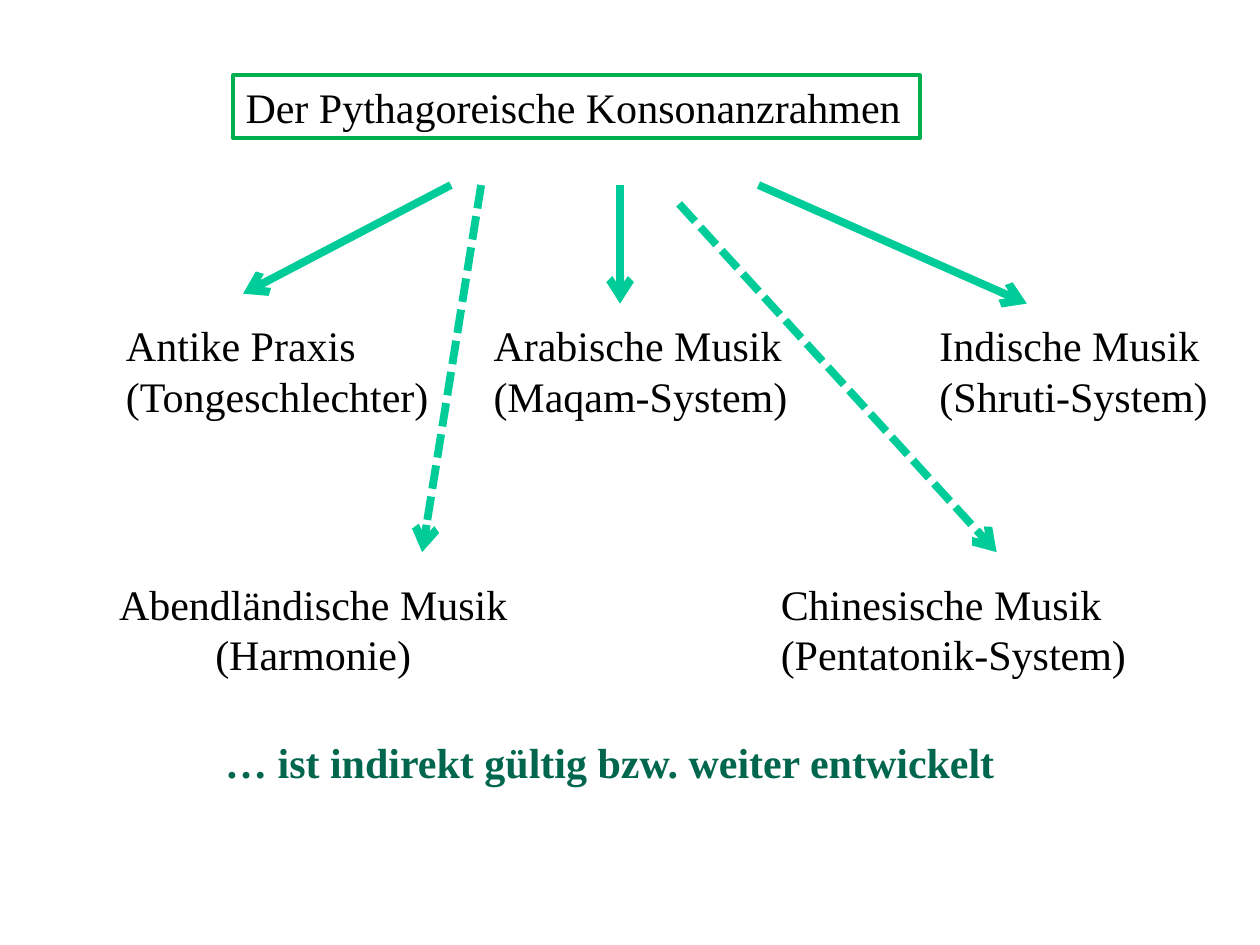
from lxml import etree
from pptx import Presentation
from pptx import util as u
from pptx.dml.color import RGBColor
from pptx.enum import dml, shapes, text
from pptx.oxml import ns

FONT = "Times New Roman"
BLACK, FRAME, ARROW, DARK = "000000", "00B050", "00CC99", "00664D"


def color(hex_value):
    """Return the colour for a hex string."""
    return RGBColor.from_string(hex_value)


def write(shape, lines, align=text.PP_ALIGN.LEFT, hue=BLACK, bold=False):
    """Fill a shape with unwrapped lines of text in the slide's type."""
    frame = shape.text_frame
    frame.text = "\n".join(lines)
    frame.word_wrap = False
    frame.auto_size = text.MSO_AUTO_SIZE.SHAPE_TO_FIT_TEXT
    frame.vertical_anchor = text.MSO_ANCHOR.TOP
    for paragraph in frame.paragraphs:
        paragraph.alignment = align
        for run in paragraph.runs:
            run.font.name = FONT
            run.font.size = u.Pt(24)
            run.font.bold = bold
            run.font.color.rgb = color(hue)


def add_heading(slide, left, top, width, height):
    """Place the framed heading in its box."""
    heading = slide.shapes.add_shape(
        shapes.MSO_SHAPE.RECTANGLE, *map(u.Cm, (left, top, width, height)))
    heading.shadow.inherit = False
    heading.fill.background()
    heading.line.color.rgb = color(FRAME)
    heading.line.width = u.Pt(2.25)
    write(heading, ["Der Pythagoreische Konsonanzrahmen"])


def add_label(slide, left, top, width, height, lines, **style):
    """Place a text label in its box."""
    label = slide.shapes.add_textbox(*map(u.Cm, (left, top, width, height)))
    write(label, lines, **style)


def add_traditions(slide, top, entries):
    """Place one row of musical traditions, each with its system below."""
    for left, width, tradition, system, align in entries:
        add_label(slide, left, top, width, 2.31, [tradition, system], align=align)


def add_arrow(slide, start, end, dashed):
    """Draw a green arrow, dashed for an indirect influence."""
    arrow = slide.shapes.add_connector(
        shapes.MSO_CONNECTOR.STRAIGHT, *map(u.Cm, (*start, *end)))
    arrow.line.color.rgb = color(ARROW)
    arrow.line.width = u.Pt(4.5)
    if dashed:
        arrow.line.dash_style = dml.MSO_LINE.SQUARE_DOT
    etree.SubElement(arrow.line._get_or_add_ln(), ns.qn("a:tailEnd"), type="arrow")
    etree.SubElement(arrow._element.spPr, ns.qn("a:effectLst"))


def add_influences(slide, left, top, width, height):
    """Fan the arrows out from the heading to the traditions."""
    near = 2.39
    influences = [
        ((4.19, 0), (0, 2.19), False),
        ((7.6, 0), (7.6, near), False),
        ((10.39, 0), (width, near), False),
        ((4.8, 0), (3.61, height), True),
        ((8.79, 0.38), (15.19, height), True),
    ]
    for (x1, y1), (x2, y2), dashed in influences:
        add_arrow(slide, (left + x1, top + y1), (left + x2, top + y2), dashed)


def main():
    """Build the slide and save it."""
    deck = Presentation()
    deck.slide_width, deck.slide_height = u.Cm(25.4), u.Cm(19.05)
    slide = deck.slides.add_slide(deck.slide_layouts[6])
    start, center = text.PP_ALIGN.LEFT, text.PP_ALIGN.CENTER
    add_traditions(slide, 6.32, [
        (2.29, 6.65, "Antike Praxis", "(Tongeschlechter)", start),
        (9.7, 6.5, "Arabische Musik", "(Maqam-System)", start),
        (18.69, 5.97, "Indische Musik", "(Shruti-System)", start),
    ])
    add_traditions(slide, 11.53, [
        (2.11, 8.41, "Abendländische Musik", "(Harmonie)", center),
        (15.49, 7.54, "Chinesische Musik", "(Pentatonik-System)", start),
    ])
    add_heading(slide, 4.7, 1.52, 13.84, 1.27)
    add_influences(slide, 4.9, 3.73, 15.8, 7.4)
    add_label(slide, 4.29, 14.73, 16.23, 1.27,
              ["… ist indirekt gültig bzw. weiter entwickelt"], hue=DARK, bold=True)
    deck.save("out.pptx")


if __name__ == "__main__":
    main()
